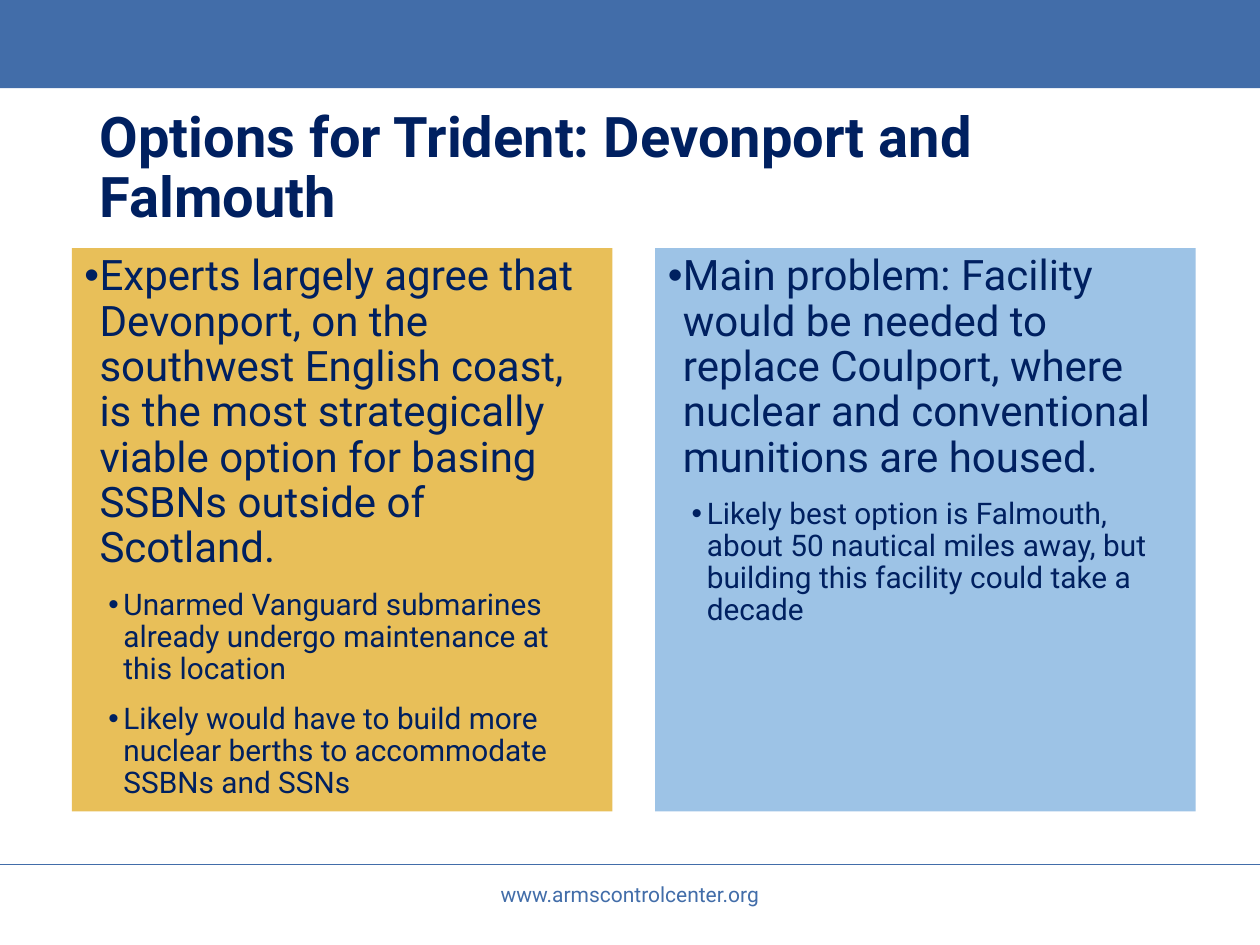
from dataclasses import dataclass

from lxml import etree
from pptx import Presentation
from pptx.dml.color import RGBColor
from pptx.enum.shapes import MSO_CONNECTOR, MSO_SHAPE
from pptx.enum.text import MSO_ANCHOR, MSO_AUTO_SIZE, PP_ALIGN
from pptx.oxml.ns import qn
from pptx.util import Emu, Inches, Pt

LINE, RECT = MSO_CONNECTOR.STRAIGHT, MSO_SHAPE.RECTANGLE
TOP, MIDDLE = MSO_ANCHOR.TOP, MSO_ANCHOR.MIDDLE
LEFT, CENTER = PP_ALIGN.LEFT, PP_ALIGN.CENTER
FIXED = MSO_AUTO_SIZE.NONE
FONT = "Roboto"
COLORS = {"blue": "426DA9", "navy": "002060", "gold": "E8BF59", "sky": "9DC3E6"}

# Slide size and the two-column grid, in inches
WIDE, HIGH = 10, 7.5
EDGE, STEP = 0.57, 4.63
COL_W, COL_H, COL_TOP = 4.29, 4.47, 1.97
HANG = 0.12
INDENTS = (0.12, 0.31)
SIZES = (24, 17)


@dataclass
class Panel:
    fill: str
    lead: str
    points: list[str]


PANELS = [
    Panel("gold",
          "Experts largely agree that Devonport, on the southwest English coast, "
          "is the most strategically viable option for basing SSBNs outside of Scotland.",
          ["Unarmed Vanguard submarines already undergo maintenance at this location",
           "Likely would have to build more nuclear berths to accommodate SSBNs and SSNs"]),
    Panel("sky",
          "Main problem: Facility would be needed to replace Coulport, "
          "where nuclear and conventional munitions are housed.",
          ["Likely best option is Falmouth, about 50 nautical miles away, "
           "but building this facility could take a decade"]),
]


def color(name: str) -> RGBColor:
    return RGBColor.from_string(COLORS[name])


def place(shape, left: float, top: float, width: float, height: float) -> None:
    shape.left, shape.top = Inches(left), Inches(top)
    shape.width, shape.height = Inches(width), Inches(height)


def setup(frame, anchor) -> None:
    frame.word_wrap = True
    frame.auto_size = FIXED
    frame.vertical_anchor = anchor


def add_run(para, text: str, size: float, tint: str, bold: bool = False) -> None:
    run = para.add_run()
    run.text = text
    font = run.font
    font.name, font.size, font.bold = FONT, Pt(size), bold
    font.color.rgb = color(tint)


def add_bullet(para, level: int) -> None:
    props = para._p.get_or_add_pPr()
    props.set("marL", str(Inches(INDENTS[level])))
    props.set("indent", str(-Inches(HANG)))
    etree.SubElement(props, qn("a:buChar"), char="•")
    if level:
        tabs = etree.SubElement(props, qn("a:tabLst"))
        etree.SubElement(tabs, qn("a:tab"), pos=str(Inches(HANG)), algn="l")


def fill_panel(shape, col: int, panel: Panel) -> None:
    place(shape, EDGE + col * STEP, COL_TOP, COL_W, COL_H)
    shape.fill.solid()
    shape.fill.fore_color.rgb = color(panel.fill)
    frame = shape.text_frame
    setup(frame, TOP)
    for i, text in enumerate([panel.lead, *panel.points]):
        para = frame.add_paragraph() if i else frame.paragraphs[0]
        level = min(i, 1)
        add_bullet(para, level)
        para.level = level
        para.alignment = LEFT
        para.line_spacing = 0.9
        para.space_before = Pt(10 if i else 0)
        add_run(para, text, SIZES[level], "navy")


def main() -> None:
    deck = Presentation()
    deck.slide_width, deck.slide_height = Inches(WIDE), Inches(HIGH)
    slide = deck.slides.add_slide(deck.slide_layouts[3])
    shapes = slide.shapes

    # Top band
    band = shapes.add_shape(RECT, Emu(0), Emu(0), Inches(WIDE), Inches(0.7))
    band.shadow.inherit = False
    band.fill.solid()
    band.fill.fore_color.rgb = color("blue")
    band.line.fill.background()

    # Title
    title = shapes.title
    place(title, 0.69, 0.62, 8.62, 1.45)
    setup(title.text_frame, MIDDLE)
    para = title.text_frame.paragraphs[0]
    para.alignment = LEFT
    para.line_spacing = 0.9
    add_run(para, "Options for Trident: Devonport and Falmouth", 32, "navy", True)

    # Two columns
    for col, panel in enumerate(PANELS):
        fill_panel(slide.placeholders[col + 1], col, panel)

    # Footer rule and web address
    level = Inches(6.86)
    rule = shapes.add_connector(LINE, Emu(0), level, Inches(WIDE), level)
    rule.line.color.rgb = color("blue")
    rule.line.width = Pt(0.5)
    etree.SubElement(rule._element.spPr, qn("a:effectLst"))

    width = 3.38
    foot = shapes.add_textbox(Inches((WIDE - width) / 2), Inches(6.95),
                              Inches(width), Inches(0.4))
    setup(foot.text_frame, TOP)
    para = foot.text_frame.paragraphs[0]
    para.alignment = CENTER
    add_run(para, "www.armscontrolcenter.org", 12, "blue")

    deck.save("out.pptx")


if __name__ == "__main__":
    main()
